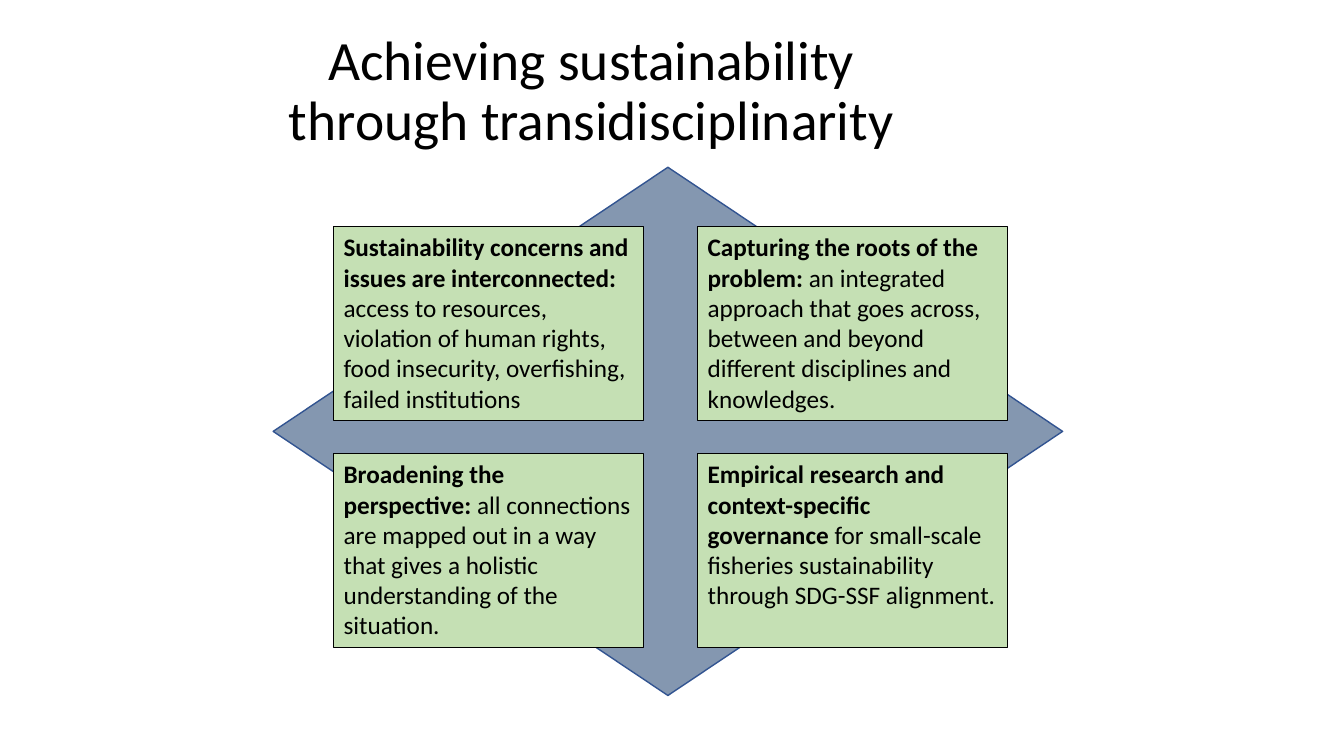
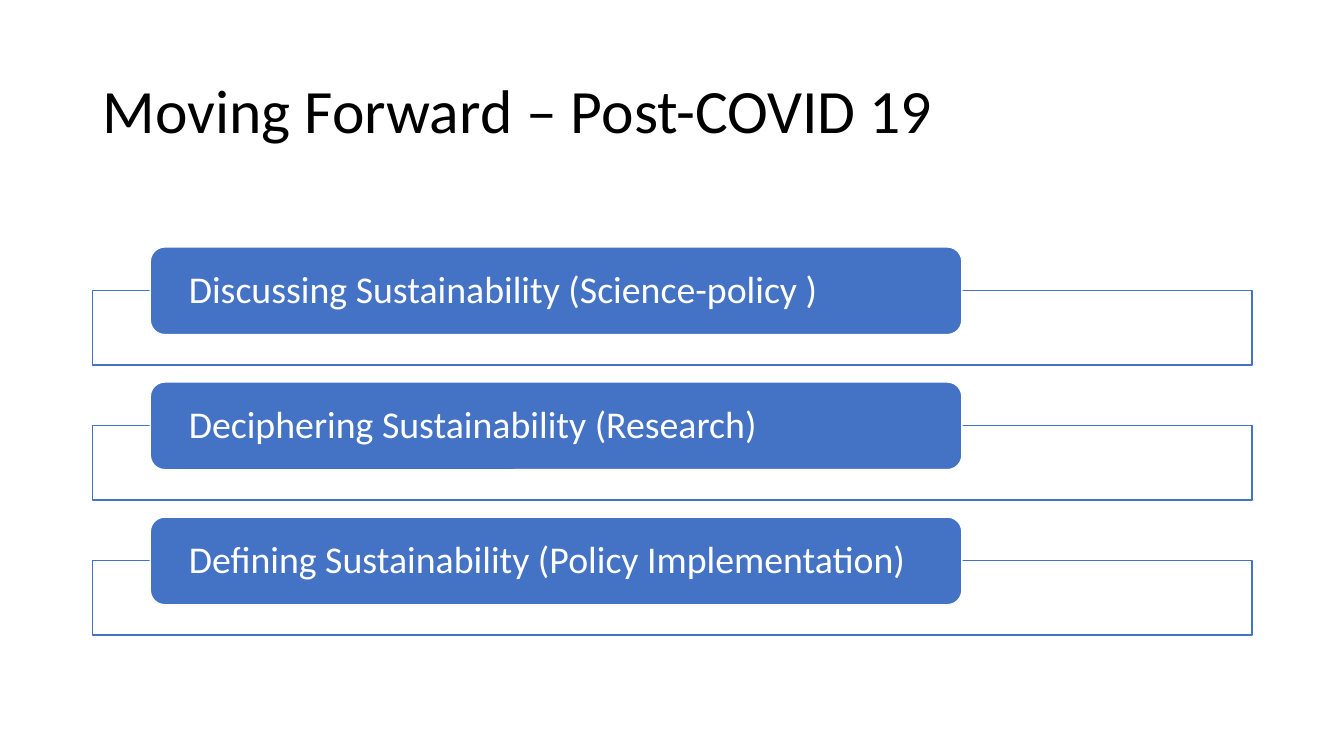
from dataclasses import dataclass

from pptx import Presentation
from pptx.dml.color import RGBColor
from pptx.enum import shapes, text
from pptx.util import Inches, Pt


@dataclass(frozen=True)
class Theme:
    font: str = "Calibri"
    ink: str = "000000"
    paper: str = "FFFFFF"
    accent: str = "4472C4"
    diamond: str = "8497B0"
    diamond_line: str = "325491"
    card: str = "C5E0B4"
    title_size: float = 44
    long_title_size: float = 39.6
    card_size: float = 18
    bar_size: float = 27
    tight: float = 0.9


class Deck:
    def __init__(self, theme):
        self.theme = theme
        self.prs = Presentation()
        self.prs.slide_width = Inches(13.33)
        self.prs.slide_height = Inches(7.5)
        self.slide = None

    def add_slide(self):
        self.slide = self.prs.slides.add_slide(self.prs.slide_layouts[5])

    def style(self, p, size, color, align=text.PP_ALIGN.LEFT):
        p.alignment = align
        p.font.name = self.theme.font
        p.font.size = Pt(size)
        p.font.color.rgb = RGBColor.from_string(color)

    def title(self, words, left, top, width, height, size, align=text.PP_ALIGN.LEFT):
        sp = self.slide.shapes.title
        sp.left, sp.top = Inches(left), Inches(top)
        sp.width, sp.height = Inches(width), Inches(height)
        tf = sp.text_frame
        tf.text = words
        tf.auto_size = text.MSO_AUTO_SIZE.NONE
        tf.vertical_anchor = text.MSO_ANCHOR.MIDDLE
        p = tf.paragraphs[0]
        p.line_spacing = self.theme.tight
        self.style(p, size, self.theme.ink, align)

    def shape(self, kind, left, top, width, height, fill, line, line_width=1):
        sp = self.slide.shapes.add_shape(
            kind, Inches(left), Inches(top), Inches(width), Inches(height))
        sp.shadow.inherit = False
        sp.fill.solid()
        sp.fill.fore_color.rgb = RGBColor.from_string(fill)
        sp.line.color.rgb = RGBColor.from_string(line)
        sp.line.width = Pt(line_width)
        return sp

    def diamond(self, left, top, width, height):
        self.shape(shapes.MSO_SHAPE.DIAMOND, left, top, width, height,
                   self.theme.diamond, self.theme.diamond_line)

    def card(self, lead, body, left, top, width, height):
        sp = self.shape(shapes.MSO_SHAPE.RECTANGLE, left, top, width, height,
                        self.theme.card, self.theme.ink, 0.75)
        tf = sp.text_frame
        tf.word_wrap = True
        tf.vertical_anchor = text.MSO_ANCHOR.TOP
        p = tf.paragraphs[0]
        self.style(p, self.theme.card_size, self.theme.ink)
        r = p.add_run()
        r.text = lead
        r.font.bold = True
        p.add_run().text = body

    def bar(self, words, top):
        theme = self.theme
        self.shape(shapes.MSO_SHAPE.RECTANGLE, 0.92, top + 0.43, 11.5, 0.74,
                   theme.paper, theme.accent)
        sp = self.shape(shapes.MSO_SHAPE.ROUNDED_RECTANGLE, 1.49, top, 8.05, 0.87,
                        theme.accent, theme.paper)
        tf = sp.text_frame
        tf.text = words
        tf.word_wrap = True
        tf.vertical_anchor = text.MSO_ANCHOR.MIDDLE
        tf.margin_left = tf.margin_right = Inches(0.34)
        tf.margin_top = tf.margin_bottom = 0
        p = tf.paragraphs[0]
        p.line_spacing = theme.tight
        self.style(p, theme.bar_size, theme.paper)


CARDS = [
    ("Sustainability concerns and issues are interconnected:",
     " access to resources, violation of human rights, food insecurity, "
     "overfishing, failed institutions"),
    ("Capturing the roots of the problem: ",
     "an integrated approach that goes across, between and beyond different "
     "disciplines and knowledges."),
    ("Broadening the perspective: ",
     "all connections are mapped out in a way that gives a holistic "
     "understanding of the situation."),
    ("Empirical research and context-specific governance ",
     "for small-scale fisheries sustainability through SDG-SSF alignment."),
]

STEPS = [
    "Discussing Sustainability (Science-policy )",
    "Deciphering Sustainability (Research)",
    "Defining Sustainability (Policy Implementation)",
]


def transdisciplinarity(deck):
    deck.add_slide()
    deck.title("Achieving sustainability\vthrough transidisciplinarity",
               0.17, 0.29, 11.39, 1.25, deck.theme.long_title_size,
               text.PP_ALIGN.CENTER)
    deck.diamond(2.71, 1.66, 7.83, 5.24)
    for i, (lead, body) in enumerate(CARDS):
        row, col = divmod(i, 2)
        deck.card(lead, body, 3.31 + 3.61 * col, 2.25 + 2.25 * row, 3.07, 1.92)


def moving_forward(deck):
    deck.add_slide()
    deck.title("Moving Forward – Post-COVID 19", 0.92, 0.4, 11.5, 1.45,
               deck.theme.title_size)
    for i, step in enumerate(STEPS):
        deck.bar(step, 2.45 + 1.34 * i)


def main():
    deck = Deck(Theme())
    transdisciplinarity(deck)
    moving_forward(deck)
    deck.prs.save("out.pptx")


if __name__ == "__main__":
    main()
